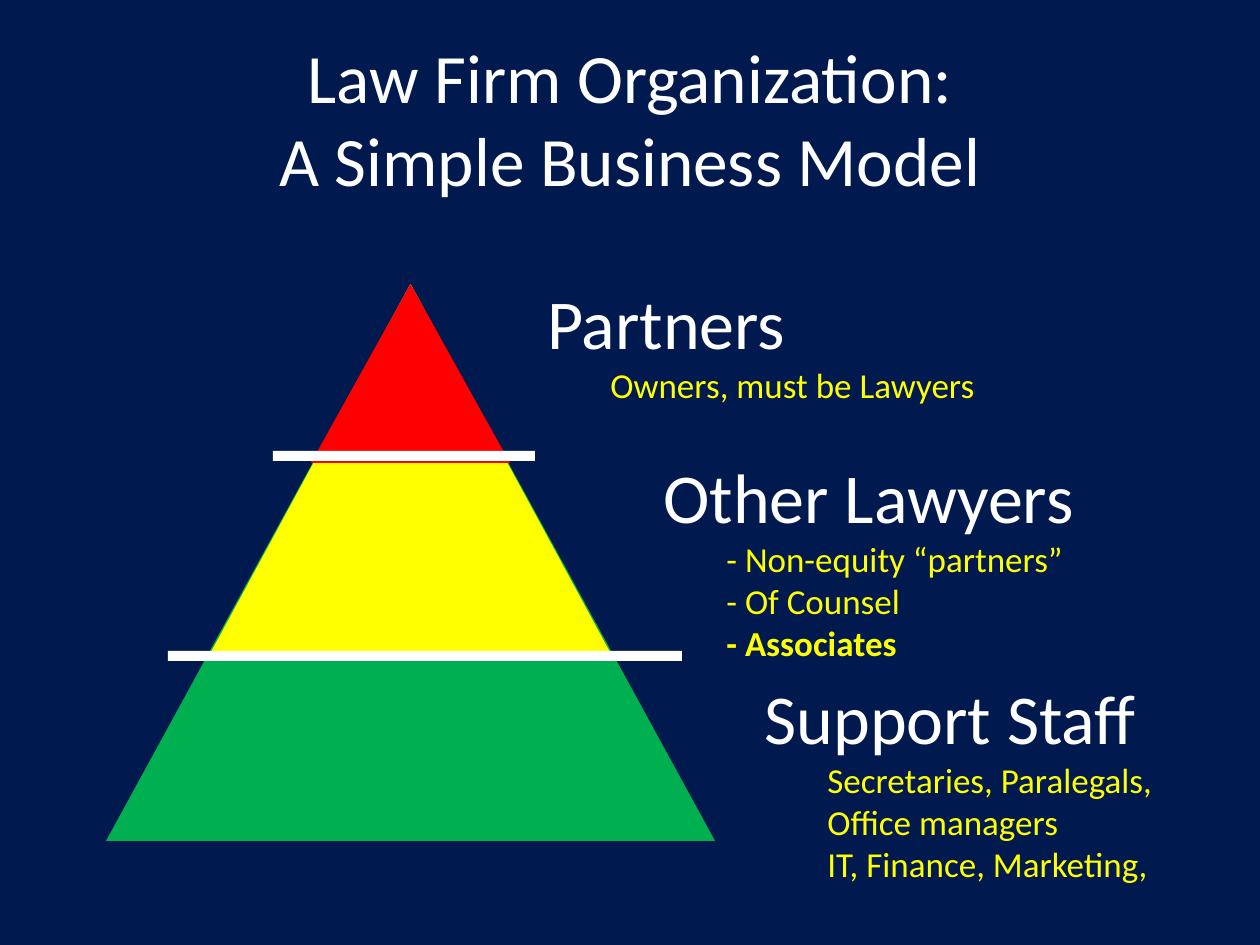
from dataclasses import dataclass
from typing import NamedTuple

from pptx import Presentation
from pptx.dml.color import RGBColor as RGB
from pptx.enum.shapes import MSO_SHAPE as Shape
from pptx.enum.text import MSO_ANCHOR as Anchor, MSO_AUTO_SIZE as Fit, PP_ALIGN as Align
from pptx.util import Emu, Pt

SCALE = 914400 / 126


@dataclass(frozen=True)
class Theme:
    font: str = "Calibri"
    back: RGB = RGB(0x00, 0x1A, 0x4F)
    white: RGB = RGB(0xFF, 0xFF, 0xFF)
    yellow: RGB = RGB(0xFF, 0xFF, 0x00)
    green: RGB = RGB(0x00, 0xB0, 0x50)
    red: RGB = RGB(0xFF, 0x00, 0x00)
    title: float = 39.6
    head: int = 40
    body: int = 20


class Box(NamedTuple):
    left: int
    top: int
    width: int
    height: int


class Tier(NamedTuple):
    width: int
    height: int
    color: RGB


class Label(NamedTuple):
    box: Box
    head: str
    items: tuple[str, ...]
    bold: str = ""


THEME = Theme()
APEX = 410, 284
INDENT = 63
TIERS = (
    Tier(609, 557, THEME.green),
    Tier(399, 368, THEME.yellow),
    Tier(199, 179, THEME.red),
)
BARS = (Box(273, 451, 262, 10), Box(168, 651, 514, 10))
LABELS = (
    Label(Box(535, 273, 456, 140), "Partners", ("Owners, must be Lawyers",)),
    Label(Box(651, 447, 446, 224), "Other Lawyers",
          ("- Non-equity “partners”", "- Of Counsel", "- Associates"), "- Associates"),
    Label(Box(752, 668, 434, 224), "Support Staff",
          ("Secretaries, Paralegals,", "Office managers", "IT, Finance, Marketing,")),
)


def px(num: float) -> Emu:
    return Emu(round(num * SCALE))


def style(para, size: float, color: RGB, bold: bool = False) -> None:
    for run in para.runs:
        for key, val in {"name": THEME.font, "size": Pt(size), "bold": bold}.items():
            setattr(run.font, key, val)
        run.font.color.rgb = color


def add_block(slide, kind: Shape, box: Box, color: RGB) -> None:
    block = slide.shapes.add_shape(kind, *map(px, box))
    block.shadow.inherit = False
    block.fill.solid()
    block.fill.fore_color.rgb = color
    block.line.fill.background()


def add_title(slide, box: Box, text: str) -> None:
    title = slide.shapes.title
    for key, val in zip(Box._fields, box):
        setattr(title, key, px(val))
    frame = title.text_frame
    frame.text = text
    form = {"word_wrap": True, "auto_size": Fit.NONE, "vertical_anchor": Anchor.MIDDLE}
    for key, val in form.items():
        setattr(frame, key, val)
    para = frame.paragraphs[0]
    para.alignment = Align.CENTER
    style(para, THEME.title, THEME.white)


def add_label(slide, label: Label) -> None:
    frame = slide.shapes.add_textbox(*map(px, label.box)).text_frame
    frame.word_wrap = True
    frame.text = label.head
    style(frame.paragraphs[0], THEME.head, THEME.white)
    for item in label.items:
        para = frame.add_paragraph()
        para.text = item
        para._p.get_or_add_pPr().set("marL", str(px(INDENT)))
        style(para, THEME.body, THEME.yellow, item == label.bold)


def main() -> None:
    deck = Presentation()
    deck.slide_width, deck.slide_height = px(1260), px(945)
    slide = deck.slides.add_slide(deck.slide_layouts.get_by_name("Title Only"))
    fill = slide.background.fill
    fill.solid()
    fill.fore_color.rgb = THEME.back

    add_title(slide, Box(63, 38, 1134, 158),
              "Law Firm Organization:\vA Simple Business Model")
    mid, top = APEX
    for tier in TIERS:
        box = Box(mid - tier.width // 2, top, tier.width, tier.height)
        add_block(slide, Shape.ISOSCELES_TRIANGLE, box, tier.color)
    for label in LABELS:
        add_label(slide, label)
    for bar in BARS:
        add_block(slide, Shape.RECTANGLE, bar, THEME.white)
    deck.save("out.pptx")


if __name__ == "__main__":
    main()
